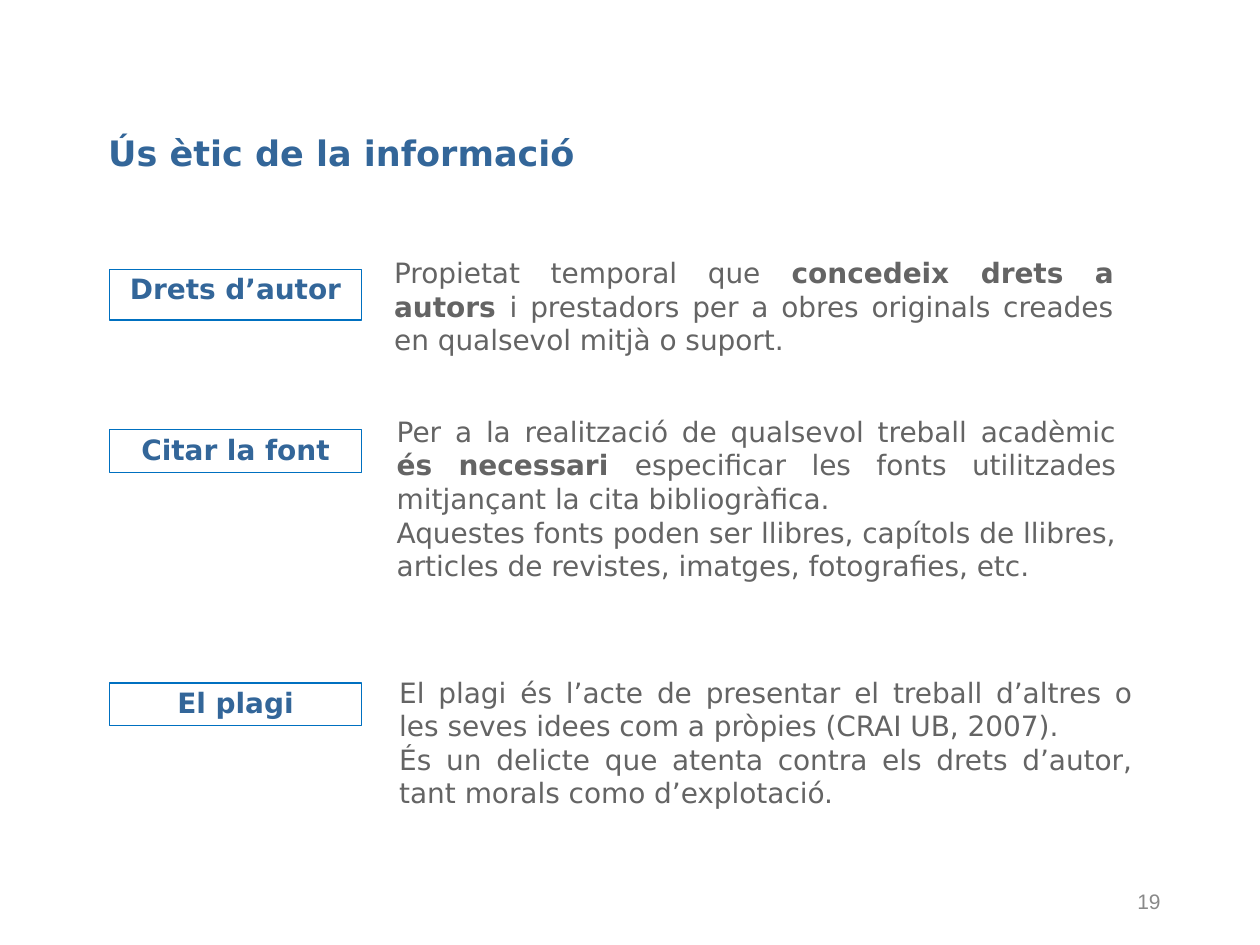
from pptx import Presentation
from pptx.dml.color import RGBColor
from pptx.enum.shapes import MSO_SHAPE
from pptx.enum.text import MSO_ANCHOR, PP_ALIGN
from pptx.util import Inches, Pt

WIDTH, HEIGHT = Inches(10), Inches(7.5)
COLORS = {"heading": "336699", "body": "646464", "border": "0070C0", "number": "898989"}
FONT = "DejaVu Sans"
LABEL_LEFT, LABEL_WIDTH = 8.7, 20

# Each section: label, label (top, height), body (left, top, width, height), paragraphs.
# A paragraph is a list of pieces that alternate between regular and bold.
SECTIONS = [
    ("Drets d’autor", (28.53, 5.33), (30.3, 26.4, 59.1, 12.13), [
        ["Propietat temporal que ", "concedeix drets a autors ",
         "i prestadors per a obres originals creades en qualsevol mitjà o suport."],
    ]),
    ("Citar la font", (45.47, 4.53), (30.5, 43.2, 59.1, 22.93), [
        ["Per a la realització de qualsevol treball acadèmic ", "és necessari ",
         "especificar les fonts utilitzades mitjançant la cita bibliogràfica."],
        ["Aquestes fonts poden ser llibres, capítols de llibres, "
         "articles de revistes, imatges, fotografies, etc."],
    ]),
    ("El plagi", (72.27, 4.53), (30.7, 70.8, 60.2, 19.33), [
        ["El plagi és l’acte de presentar el treball d’altres o "
         "les seves idees com a pròpies (CRAI UB, 2007)."],
        ["És un delicte que atenta contra els drets d’autor, "
         "tant morals como d’explotació."],
    ]),
]


def color(name):
    return RGBColor.from_string(COLORS[name])


def place(left, top, width, height):
    """Turn percentages of the slide's size into lengths."""
    return (int(WIDTH * left / 100), int(HEIGHT * top / 100),
            int(WIDTH * width / 100), int(HEIGHT * height / 100))


def style(paragraph, size, color_name, align, bold=None, font=FONT):
    paragraph.alignment = align
    paragraph.font.name = font
    paragraph.font.size = Pt(size)
    paragraph.font.bold = bold
    paragraph.font.color.rgb = color(color_name)


def add_text_box(slide, box):
    frame = slide.shapes.add_textbox(*place(*box)).text_frame
    frame.word_wrap = True
    return frame


def add_title(slide, text):
    paragraph = add_text_box(slide, (7.6, 13.73, 90, 8.67)).paragraphs[0]
    paragraph.text = text
    paragraph.line_spacing = 0.9
    style(paragraph, 20, "heading", PP_ALIGN.LEFT, bold=True)


def add_label(slide, text, top, height):
    shape = slide.shapes.add_shape(
        MSO_SHAPE.RECTANGLE, *place(LABEL_LEFT, top, LABEL_WIDTH, height))
    shape.shadow.inherit = False
    shape.fill.background()
    shape.line.color.rgb = color("border")
    shape.line.width = Pt(0.75)
    frame = shape.text_frame
    frame.word_wrap = True
    frame.vertical_anchor = MSO_ANCHOR.TOP
    paragraph = frame.paragraphs[0]
    paragraph.text = text
    paragraph.line_spacing = 0.9
    style(paragraph, 16, "heading", PP_ALIGN.CENTER, bold=True)


def add_body(slide, box, paragraphs):
    frame = add_text_box(slide, box)
    for index, pieces in enumerate(paragraphs):
        paragraph = frame.add_paragraph() if index else frame.paragraphs[0]
        style(paragraph, 16, "body", PP_ALIGN.JUSTIFY)
        for position, piece in enumerate(pieces):
            run = paragraph.add_run()
            run.text = piece
            run.font.bold = position % 2 == 1


def add_slide_number(slide, number):
    frame = add_text_box(slide, (70.6, 92.67, 22.5, 5.33))
    frame.vertical_anchor = MSO_ANCHOR.MIDDLE
    paragraph = frame.paragraphs[0]
    paragraph.text = number
    style(paragraph, 12, "number", PP_ALIGN.RIGHT, font="Arial")


def main():
    presentation = Presentation()
    presentation.slide_width, presentation.slide_height = WIDTH, HEIGHT
    slide = presentation.slides.add_slide(presentation.slide_layouts[6])
    add_slide_number(slide, "19")
    add_title(slide, "Ús ètic de la informació")
    for label, label_rows, body_box, paragraphs in SECTIONS:
        add_body(slide, body_box, paragraphs)
        add_label(slide, label, *label_rows)
    presentation.save("out.pptx")


if __name__ == "__main__":
    main()
